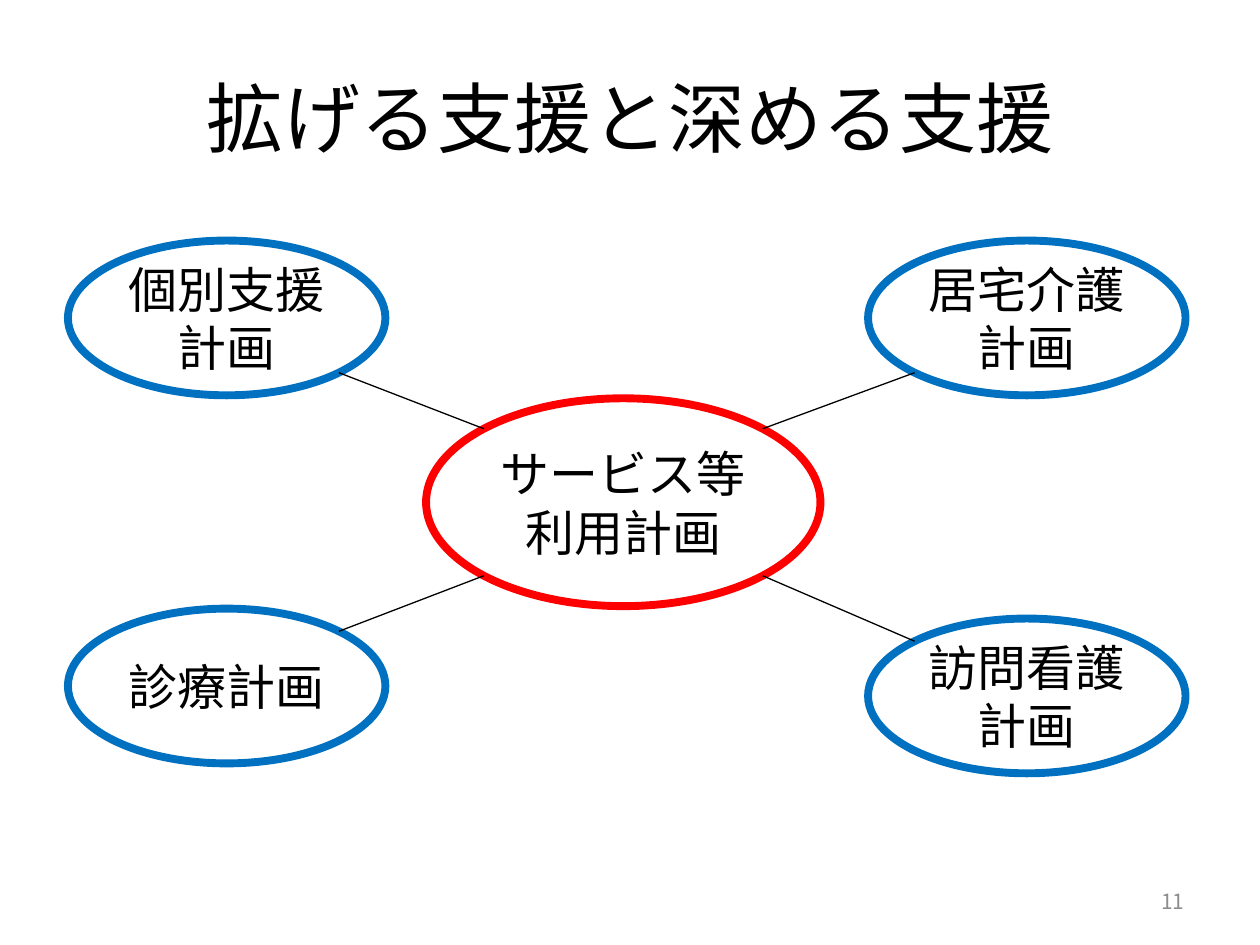
from math import sqrt

from lxml import etree
from pptx import Presentation
from pptx.dml.color import RGBColor
from pptx.enum import shapes, text
from pptx.oxml.ns import qn
from pptx.util import Cm, Pt

FONT = "Noto Sans CJK JP"
BLUE, RED, BLACK, WHITE, GRAY = "0070C0", "FF0000", "000000", "FFFFFF", "8C8C8C"


def colour(value):
    return RGBColor.from_string(value)


def write(shape, lines, size, ink=BLACK, align=text.PP_ALIGN.CENTER):
    frame = shape.text_frame
    frame.word_wrap = True
    frame.auto_size = text.MSO_AUTO_SIZE.NONE
    frame.vertical_anchor = text.MSO_ANCHOR.MIDDLE
    for index, line in enumerate(lines):
        para = frame.paragraphs[0] if index == 0 else frame.add_paragraph()
        para.alignment = align
        span = para.add_run()
        span.text = line
        span.font.size = Pt(size)
        span.font.name = FONT
        span.font.color.rgb = colour(ink)
        # Japanese glyphs use the East Asian font slot
        latin = span.font._element.find(qn("a:latin"))
        east_asian = etree.Element(qn("a:ea"), typeface=FONT)
        latin.addnext(east_asian)


def add_title(page, box, words):
    title = page.shapes.title
    title.left, title.top, title.width, title.height = map(Cm, box)
    write(title, [words], 44)


def add_plan(page, box, lines, edge, opacity):
    oval = page.shapes.add_shape(shapes.MSO_SHAPE.OVAL, *map(Cm, box))
    oval.shadow.inherit = False
    oval.fill.solid()
    oval.fill.fore_color.rgb = colour(WHITE)
    fill = oval.fill._xPr.find(qn("a:solidFill"))[0]
    etree.SubElement(fill, qn("a:alpha"), val=str(opacity * 1000))
    oval.line.color.rgb = colour(edge)
    oval.line.width = Pt(4.5)
    write(oval, lines, 28)


def rim_point(box, right, down):
    """Point on an oval's rim at 45 degrees; right and down are 1 or -1."""
    left, top, width, height = box
    reach = 1 / sqrt(2)
    return (left + width / 2 * (1 + right * reach),
            top + height / 2 * (1 + down * reach))


def add_link(page, start, end):
    link = page.shapes.add_connector(
        shapes.MSO_CONNECTOR.STRAIGHT, *map(Cm, start + end))
    link.line.color.rgb = colour(BLACK)
    link.line.width = Pt(0.75)
    etree.SubElement(link._element.spPr, qn("a:effectLst"))


def add_plan_map(page, box):
    """Four service plans around the central plan, joined by lines."""
    left, top, width, height = box
    plan_width, plan_height = 6.4, 3.12
    far = width - plan_width
    low = height - plan_height
    # Column offset, row offset, wording, direction from the centre
    plans = [
        (0, low - 0.2, ["診療計画"], -1, 1),
        (0, 0, ["個別支援", "計画"], -1, -1),
        (far, 0, ["居宅介護", "計画"], 1, -1),
        (far, low, ["訪問看護", "計画"], 1, 1),
    ]
    centre = (left + 7.22, top + 3.18, 7.95, 4.19)
    links = []
    for x, y, lines, right, down in plans:
        place = (left + x, top + y, plan_width, plan_height)
        add_plan(page, place, lines, BLUE, 82)
        links.append((rim_point(place, -right, -down),
                      rim_point(centre, right, down)))
    add_plan(page, centre, ["サービス等利用計画"], RED, 74)
    for start, end in links:
        add_link(page, start, end)


def add_page_number(page, box, number):
    label = page.shapes.add_textbox(*map(Cm, box))
    write(label, [number], 12, GRAY, text.PP_ALIGN.RIGHT)


def main():
    deck = Presentation()
    deck.slide_width, deck.slide_height = Cm(25.4), Cm(19.05)
    page = deck.slides.add_slide(deck.slide_layouts[5])
    add_title(page, (1.27, 0.76, 22.86, 3.18), "拡げる支援と深める支援")
    add_plan_map(page, (1.37, 4.85, 22.53, 10.74))
    add_page_number(page, (18.2, 17.66, 5.93, 1.01), "11")
    deck.save("out.pptx")


if __name__ == "__main__":
    main()
